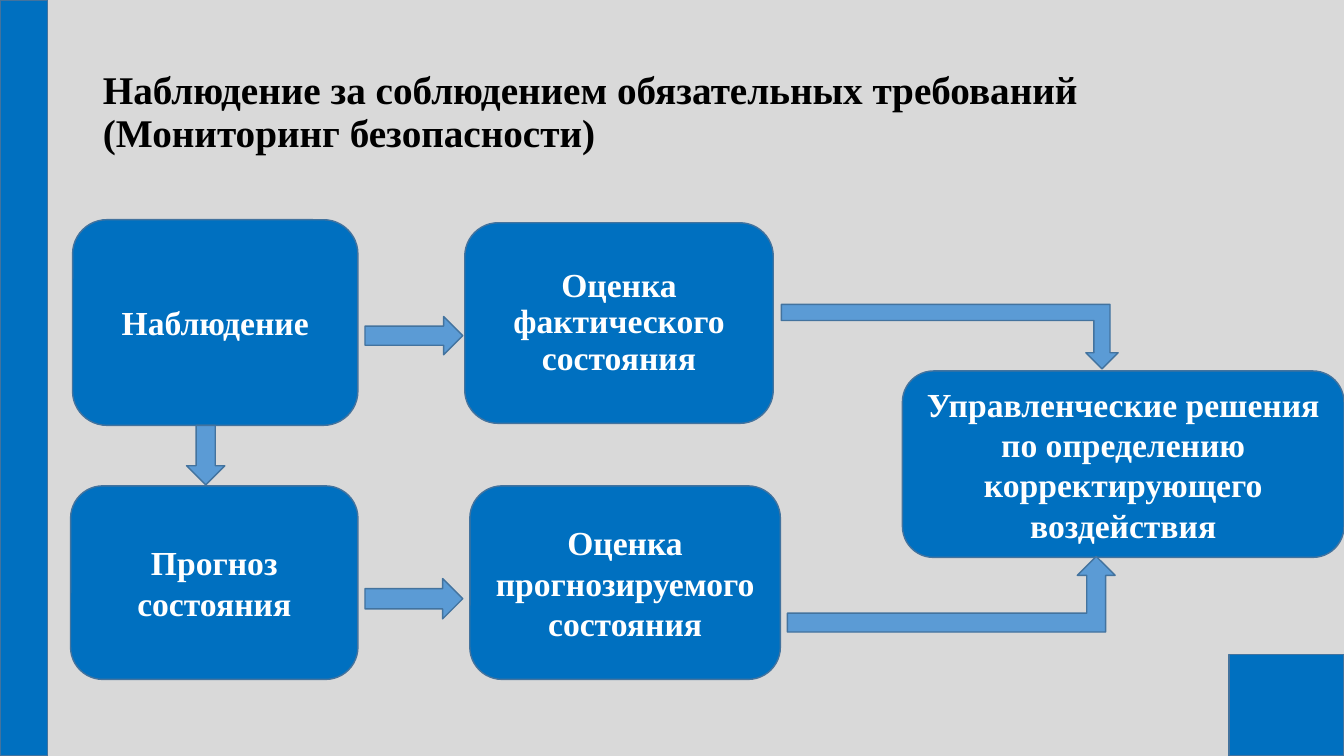
from pptx import Presentation
from pptx.dml.color import RGBColor
from pptx.enum.shapes import MSO_SHAPE as SHAPE
from pptx.enum.text import MSO_ANCHOR as ANCHOR, PP_ALIGN as ALIGN
from pptx.util import Inches, Pt

COLORS = {
    "background": "D9D9D9",
    "box": "0070C0",
    "arrow": "5B9BD5",
    "outline": "43739E",
    "title": "000000",
    "label": "FFFFFF",
}
FONT = "Times New Roman"

STAGES = [
    ("Наблюдение", (0.72, 2.18, 2.83, 2.04), 1),
    ("Оценка фактического состояния", (4.61, 2.21, 3.06, 1.99), 0.9),
    ("Управленческие решения по определению корректирующего воздействия",
     (8.95, 3.68, 4.38, 1.85), 1),
    ("Прогноз состояния", (0.7, 4.82, 2.85, 1.92), 1),
    ("Оценка прогнозируемого состояния", (4.66, 4.82, 3.08, 1.92), 1),
]
ARROWS = [
    (SHAPE.RIGHT_ARROW, (3.62, 3.14, 0.97, 0.38), False),
    (SHAPE.BENT_UP_ARROW, (7.75, 3.02, 3.34, 0.64), True),
    (SHAPE.BENT_UP_ARROW, (7.81, 5.52, 3.25, 0.75), False),
    (SHAPE.RIGHT_ARROW, (3.62, 5.74, 0.97, 0.4), False),
    (SHAPE.DOWN_ARROW, (1.85, 4.22, 0.38, 0.59), False),
]


def rgb(name):
    return RGBColor.from_string(COLORS[name])


def write_text(sp, text, size=24, color="label", align=ALIGN.CENTER, spacing=1):
    tf = sp.text_frame
    tf.word_wrap = True
    tf.vertical_anchor = ANCHOR.MIDDLE
    p = tf.paragraphs[0]
    p.alignment = align
    p.line_spacing = spacing
    r = p.add_run()
    r.text = text
    r.font.name = FONT
    r.font.size = Pt(size)
    r.font.bold = True
    r.font.color.rgb = rgb(color)


def add_block(s, kind, box, fill="box"):
    sp = s.shapes.add_shape(kind, *map(Inches, box))
    sp.shadow.inherit = False
    sp.fill.solid()
    sp.fill.fore_color.rgb = rgb(fill)
    sp.line.color.rgb = rgb("outline")
    sp.line.width = Pt(1)
    return sp


def add_decor(s, width, height):
    corner_w, corner_h = 1.14, 1.01
    add_block(s, SHAPE.RECTANGLE,
              (width - corner_w, height - corner_h, corner_w, corner_h))
    add_block(s, SHAPE.RECTANGLE, (0, 0, 0.47, height))


def add_title(s, text, box):
    title = s.shapes.title
    title.left, title.top, title.width, title.height = map(Inches, box)
    write_text(title, text, size=28, color="title", align=ALIGN.LEFT, spacing=0.9)


def add_stage(s, text, box, spacing):
    write_text(add_block(s, SHAPE.ROUNDED_RECTANGLE, box), text, spacing=spacing)


def add_arrow(s, kind, box, flipped):
    sp = add_block(s, kind, box, fill="arrow")
    if flipped:
        sp.element.spPr.get_or_add_xfrm().set("flipV", "1")


def build_monitoring_slide(prs, width, height):
    s = prs.slides.add_slide(prs.slide_layouts[5])
    s.background.fill.solid()
    s.background.fill.fore_color.rgb = rgb("background")
    add_decor(s, width, height)
    add_title(s, "Наблюдение за соблюдением обязательных требований "
                 "(Мониторинг безопасности)", (0.92, 0.4, 11.5, 1.45))
    for stage in STAGES:
        add_stage(s, *stage)
    for arrow in ARROWS:
        add_arrow(s, *arrow)


def main():
    width, height = 13.33, 7.5
    prs = Presentation()
    prs.slide_width, prs.slide_height = Inches(width), Inches(height)
    build_monitoring_slide(prs, width, height)
    prs.save("out.pptx")


if __name__ == "__main__":
    main()
